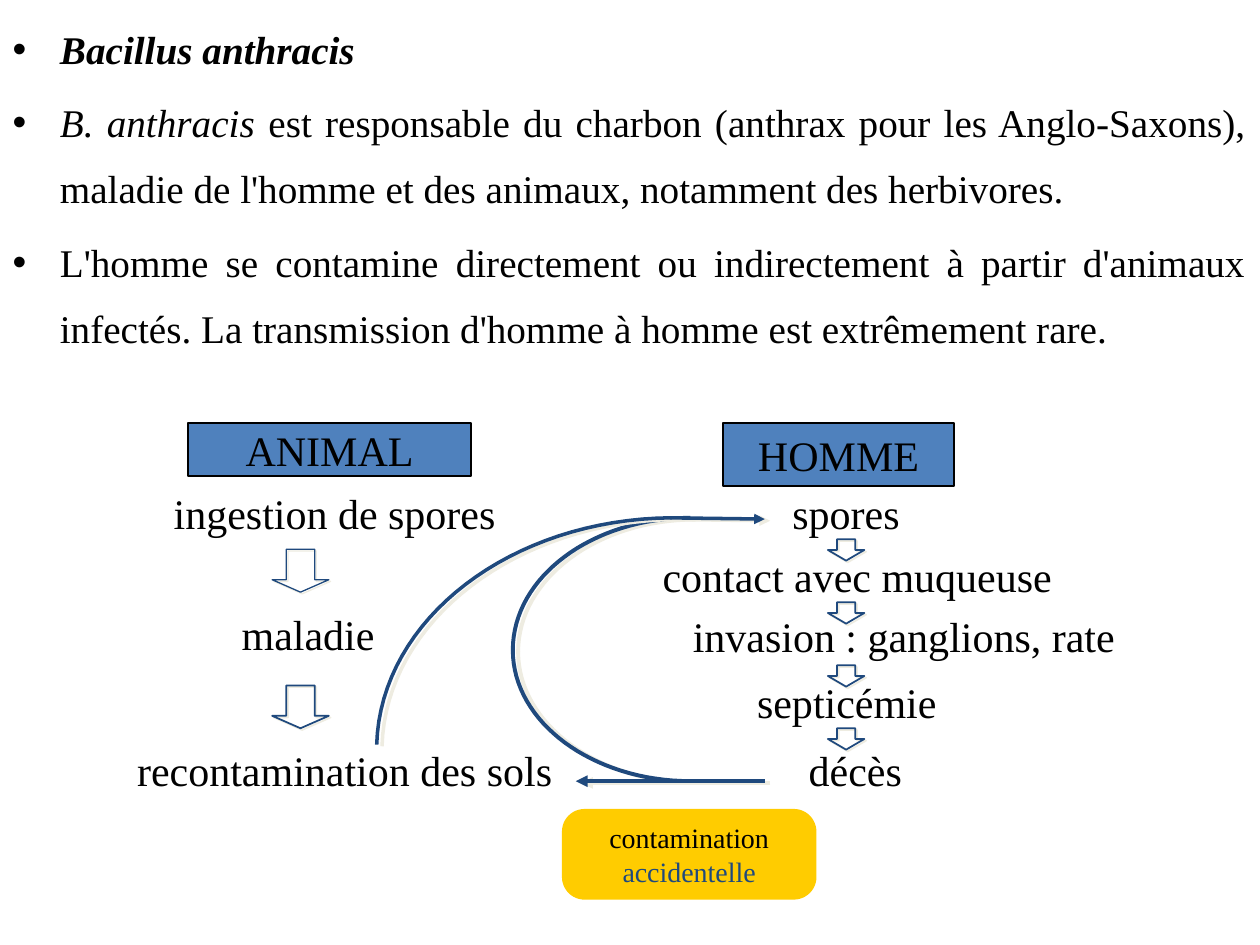
from dataclasses import dataclass

from lxml import etree
from pptx import Presentation
from pptx.dml import color as col
from pptx.enum import shapes as es, text as et
from pptx.oxml import ns
from pptx.util import Inches, Pt


def rgb(code):
    return col.RGBColor.from_string(code)


@dataclass(frozen=True)
class Theme:
    font: str = "Times New Roman"
    ink: col.RGBColor = rgb("000000")
    navy: col.RGBColor = rgb("1F497D")
    blue: col.RGBColor = rgb("4F81BD")
    gold: col.RGBColor = rgb("FFCC00")
    shade: str = "EEECE1"
    body: float = 22.4
    step: float = 24
    note: float = 16


THEME = Theme()

# Body paragraphs: runs of (text, bold, italic)
BODY = [
    [("Bacillus anthracis", True, True)],
    [("B. anthracis ", False, True),
     ("est responsable du charbon (anthrax pour les Anglo-Saxons), maladie "
      "de l'homme et des animaux, notamment des herbivores.", False, False)],
    [("L'homme se contamine directement ou indirectement à partir d'animaux "
      "infectés. La transmission d'homme à homme est extrêmement rare.",
      False, False)],
]
# Steps: (text, left, top, width), relative to the column box
ANIMAL = [("ingestion de spores", 0.29, 0.46, 2.82),
          ("maladie", 0.83, 1.42, 1.31),
          ("recontamination des sols", 0, 2.5, 3.55)]
HUMAN = [("spores", 1.03, 0.46, 1.11),
         ("contact avec muqueuse", 0, 0.96, 3.35),
         ("invasion : ganglions, rate", 0.24, 1.44, 3.66),
         ("septicémie", 0.75, 1.96, 1.68),
         ("décès", 1.16, 2.5, 1)]


def style(run, size, ink=THEME.ink):
    run.font.name, run.font.size = THEME.font, Pt(size)
    run.font.color.rgb = ink


def shade(shape, dist, angle):
    """Give a shape a hard shadow, offset by dist points."""
    props = shape._element.spPr
    for old in props.findall(ns.qn("a:effectLst")):
        props.remove(old)
    glow = etree.SubElement(etree.SubElement(props, ns.qn("a:effectLst")),
                            ns.qn("a:outerShdw"), dist=str(Pt(dist)),
                            dir=str(angle * 60000), algn="ctr", rotWithShape="0")
    etree.SubElement(glow, ns.qn("a:srgbClr"), val=THEME.shade)


def stroke(shape, width):
    shape.line.color.rgb, shape.line.width = THEME.navy, Pt(width)


def add_body(slide, left, top, width, height):
    frame = slide.placeholders[1]
    frame.left, frame.top = Inches(left), Inches(top)
    frame.width, frame.height = Inches(width), Inches(height)
    words = frame.text_frame
    words.auto_size = et.MSO_AUTO_SIZE.NONE
    for i, parts in enumerate(BODY):
        para = words.add_paragraph() if i else words.paragraphs[0]
        para.alignment, para.line_spacing = et.PP_ALIGN.JUSTIFY, 1.4
        for text, bold, slant in parts:
            run = para.add_run()
            run.text = text
            style(run, THEME.body)
            run.font.bold, run.font.italic = bold, slant


def add_head(slide, text, left, top, width, height):
    box = slide.shapes.add_shape(es.MSO_SHAPE.RECTANGLE, Inches(left),
                                 Inches(top), Inches(width), Inches(height))
    box.shadow.inherit = False
    box.fill.solid()
    box.fill.fore_color.rgb = THEME.blue
    box.line.color.rgb, box.line.width = THEME.ink, Pt(1)
    words = box.text_frame
    words.text, words.word_wrap = text, False
    words.vertical_anchor = et.MSO_ANCHOR.MIDDLE
    words.paragraphs[0].alignment = et.PP_ALIGN.CENTER
    style(words.paragraphs[0].runs[0], THEME.step)


def add_steps(slide, steps, left, top):
    for text, dx, dy, width in steps:
        box = slide.shapes.add_textbox(Inches(left + dx), Inches(top + dy),
                                       Inches(width), Inches(0.5))
        words = box.text_frame
        words.text, words.word_wrap = text, False
        words.auto_size = et.MSO_AUTO_SIZE.NONE
        words.paragraphs[0].alignment = et.PP_ALIGN.LEFT
        style(words.paragraphs[0].runs[0], THEME.step)


def add_downs(slide, left, top, size, gap, lines, tip):
    """Stack one down arrow for each line width."""
    width, height = size
    for i, line in enumerate(lines):
        down = slide.shapes.add_shape(
            es.MSO_SHAPE.DOWN_ARROW, Inches(left), Inches(top + i * gap),
            Inches(width), Inches(height))
        down.adjustments[0], down.adjustments[1] = 0.5, tip
        down.fill.background()
        stroke(down, line)
        shade(down, 1.4, 45)


def add_animal(slide, left, top):
    add_head(slide, "ANIMAL", left + 0.5, top, 2.25, 0.42)
    add_steps(slide, ANIMAL, left, top)
    add_downs(slide, left + 1.17, top + 1, (0.45, 0.34), 1.08, (0.75, 1), 0.29)


def add_human(slide, left, top):
    add_head(slide, "HOMME", left + 0.58, top, 1.83, 0.5)
    add_downs(slide, left + 1.41, top + 0.92, (0.29, 0.17), 0.5, [1] * 4, 0.5)
    add_steps(slide, HUMAN, left, top)


def add_curve(slide, ends, width, count=32):
    """Draw a cubic curve through its four control points."""
    dots = []
    for i in range(count + 1):
        t = i / count
        mix = ((1 - t) ** 3, 3 * t * (1 - t) ** 2, 3 * t * t * (1 - t), t ** 3)
        dots.append(tuple(Inches(sum(m * p[axis] for m, p in zip(mix, ends)))
                          for axis in (0, 1)))
    pen = slide.shapes.build_freeform(*dots[0])
    pen.add_line_segments(dots[1:], close=False)
    curve = pen.convert_to_shape()
    curve.fill.background()
    stroke(curve, width)
    shade(curve, 3.2, 18)


def add_arrow(slide, tail, tip, width):
    line = slide.shapes.add_connector(es.MSO_CONNECTOR.STRAIGHT,
                                      *map(Inches, tail + tip))
    stroke(line, width)
    etree.SubElement(line.line._get_or_add_ln(), ns.qn("a:tailEnd"),
                     type="triangle")
    shade(line, 3.2, 18)


def add_links(slide, left, top):
    def at(dx, dy):
        return left + dx, top + dy

    # Both halves of the loop from death back to spores
    for edge, bend in ((2.09, 1.62), (0, 0.47)):
        add_curve(slide, [at(2.49, edge), at(1.71, edge), at(1.08, bend),
                          at(1.08, 1.05)], 2.25)
    add_arrow(slide, at(3.08, 2.09), at(1.58, 2.09), 2.25)
    # Soil back to spores
    add_curve(slide, [at(0, 1.8), at(0.03, 0.8), at(1.07, 0.01),
                      at(2.34, 0)], 2)
    add_arrow(slide, at(2.33, 0), at(3.08, 0.01), 2)


def add_note(slide, left, top, width, height):
    box = slide.shapes.add_shape(es.MSO_SHAPE.ROUNDED_RECTANGLE, Inches(left),
                                 Inches(top), Inches(width), Inches(height))
    box.adjustments[0] = 0.25
    box.shadow.inherit = False
    box.fill.solid()
    box.fill.fore_color.rgb = THEME.gold
    box.line.fill.background()
    words = box.text_frame
    words.text = "contamination\naccidentelle"
    for para, ink in zip(words.paragraphs, (THEME.ink, THEME.navy)):
        para.alignment = et.PP_ALIGN.CENTER
        style(para.runs[0], THEME.note, ink)


def main():
    deck = Presentation()
    deck.slide_width, deck.slide_height = Inches(10), Inches(7.5)
    slide = deck.slides.add_slide(deck.slide_layouts[1])
    title = slide.shapes.title._element
    title.getparent().remove(title)
    add_body(slide, 0, 0, 10, 3.04)
    add_links(slide, 2.99, 4.11)
    add_animal(slide, 0.99, 3.36)
    add_human(slide, 5.16, 3.36)
    add_note(slide, 4.46, 6.42, 2.02, 0.72)
    deck.save("out.pptx")


if __name__ == "__main__":
    main()
